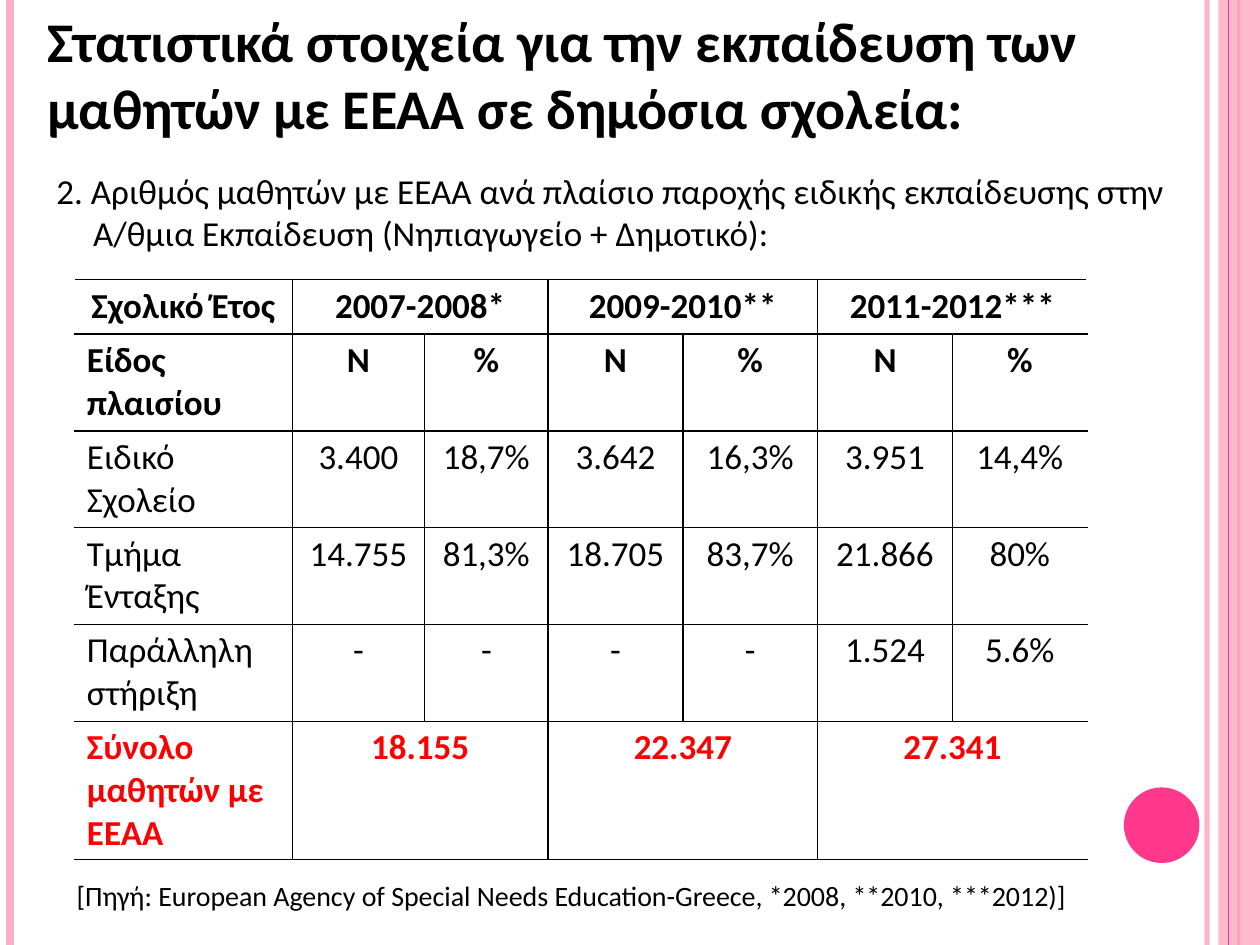
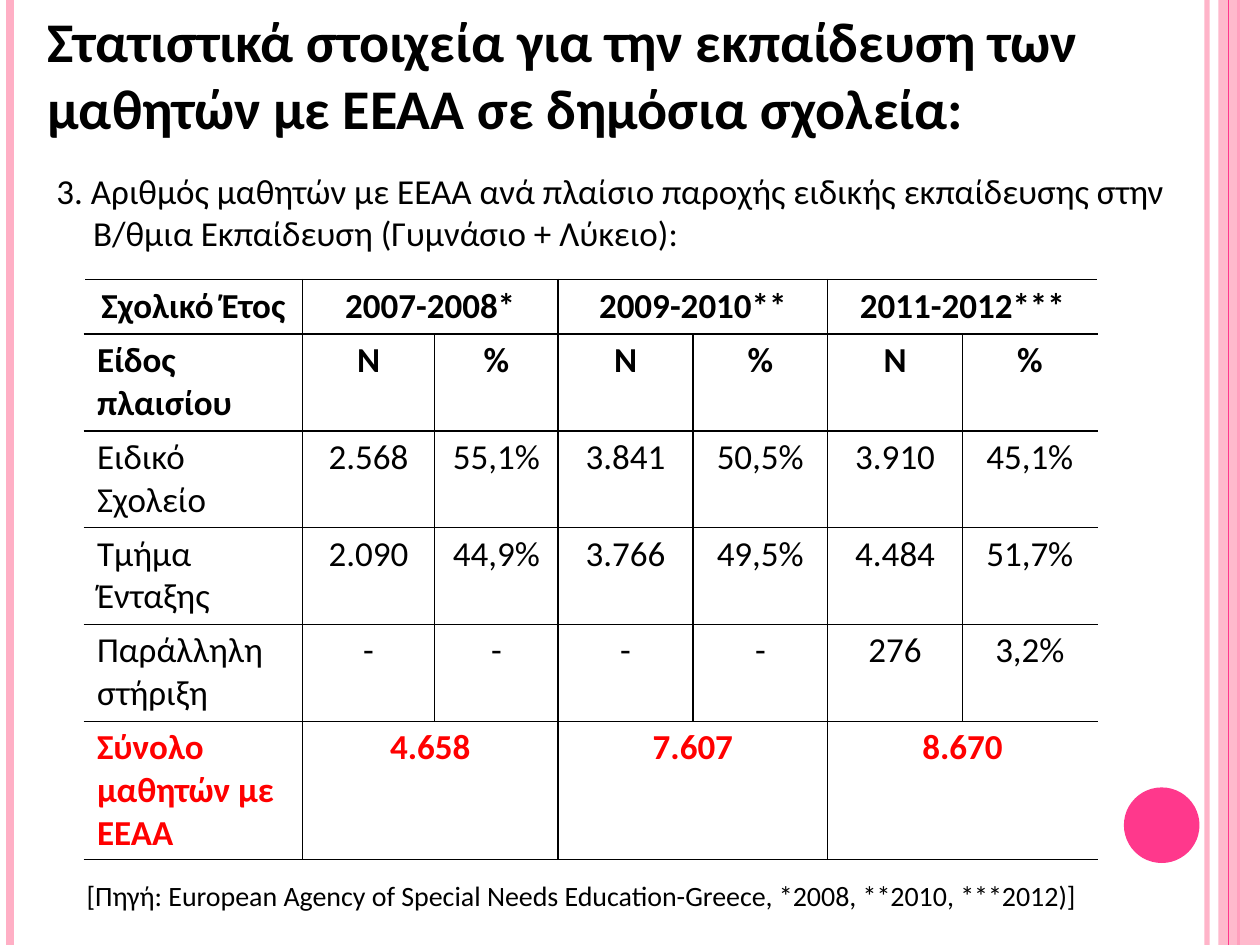
import dataclasses

import pptx
import pptx.dml.color
import pptx.enum.shapes
import pptx.enum.text
import pptx.oxml
import pptx.oxml.ns
import pptx.util


@dataclasses.dataclass(frozen=True)
class Theme:
    """Colours, font and type sizes shared by the slides."""
    font: str = "Calibri"
    ink: str = "000000"
    paper: str = "FFFFFF"
    total: str = "FF0000"
    pale: str = "FFAFC5"
    pink: str = "FF388C"
    title: int = 32
    body: int = 20
    source: int = 16


THEME = Theme()
WIDTH, HEIGHT = pptx.util.Inches(10), pptx.util.Inches(7.5)
ALIGN = pptx.enum.text.PP_ALIGN
SHAPE = pptx.enum.shapes.MSO_SHAPE
COLUMNS = (17.3, 10.5, 9.8, 10.7, 10.7, 10.7, 10.7)
ROWS = (5.75, 10.25, 10.25, 10.25, 10.25, 14.6)
TITLE = "Στατιστικά στοιχεία για την εκπαίδευση των μαθητών με ΕΕΑΑ σε δημόσια σχολεία:"
SOURCE = "[Πηγή: European Agency of Special Needs Education-Greece, *2008, **2010, ***2012)]"
QUESTION = "{}. Αριθμός μαθητών με ΕΕΑΑ ανά πλαίσιο παροχής ειδικής εκπαίδευσης στην {}:"
YEARS = ("Σχολικό Έτος", "2007-2008*", "2009-2010**", "2011-2012***")
UNITS = ("Είδος πλαισίου",) + ("Ν", "%") * 3
SETTINGS = ("Ειδικό Σχολείο", "Τμήμα Ένταξης", "Παράλληλη στήριξη")
TOTAL = "Σύνολο μαθητών με ΕΕΑΑ"
SLIDES = (
    dict(number=2, level="Α/θμια Εκπαίδευση (Νηπιαγωγείο + Δημοτικό)", left=5.9,
         counts=(("3.400", "18,7%", "3.642", "16,3%", "3.951", "14,4%"),
                 ("14.755", "81,3%", "18.705", "83,7%", "21.866", "80%"),
                 ("-", "-", "-", "-", "1.524", "5.6%")),
         totals=("18.155", "22.347", "27.341")),
    dict(number=3, level="Β/θμια Εκπαίδευση (Γυμνάσιο + Λύκειο)", left=6.7,
         counts=(("2.568", "55,1%", "3.841", "50,5%", "3.910", "45,1%"),
                 ("2.090", "44,9%", "3.766", "49,5%", "4.484", "51,7%"),
                 ("-", "-", "-", "-", "276", "3,2%")),
         totals=("4.658", "7.607", "8.670")),
)


def across(percent):
    """Return a percentage of the slide width."""
    return pptx.util.Emu(round(WIDTH * percent / 100))


def down(percent):
    """Return a percentage of the slide height."""
    return pptx.util.Emu(round(HEIGHT * percent / 100))


def rgb(color):
    """Return a colour object for a hex string."""
    return pptx.dml.color.RGBColor.from_string(color)


def set_alpha(sp, percent):
    """Make the solid colour of a shape or line partly transparent."""
    color = next(sp._element.spPr.iter(pptx.oxml.ns.qn("a:srgbClr")))
    alpha = color.makeelement(pptx.oxml.ns.qn("a:alpha"), {"val": str(percent * 1000)})
    color.append(alpha)


def add_stripe(s, left, color, weight, opacity=100):
    """Draw a full-height vertical line."""
    line = s.shapes.add_connector(pptx.enum.shapes.MSO_CONNECTOR.STRAIGHT,
                                  across(left), 0, across(left), HEIGHT)
    line.line.color.rgb = rgb(color)
    line.line.width = pptx.util.Pt(weight)
    spPr = line._element.spPr
    spPr.append(spPr.makeelement(pptx.oxml.ns.qn("a:effectLst"), {}))
    if opacity < 100:
        set_alpha(line, opacity)


def add_fill(s, kind, box, color, opacity=100):
    """Draw a plain filled shape without outline."""
    left, top, width, height = box
    sp = s.shapes.add_shape(kind, across(left), down(top), across(width), down(height))
    sp.shadow.inherit = False
    sp.fill.solid()
    sp.fill.fore_color.rgb = rgb(color)
    sp.line.fill.background()
    if opacity < 100:
        set_alpha(sp, opacity)


def add_frame(s):
    """Draw the pink side bands and the dot."""
    add_stripe(s, 95.8, THEME.pale, 3, 93)
    add_stripe(s, 0.8, THEME.pale, 4.5)
    add_stripe(s, 98.3, THEME.pink, 1.5)
    add_fill(s, SHAPE.RECTANGLE, (96.7, 0, 3.3, 100), THEME.pale, 87)
    add_stripe(s, 97.5, THEME.pink, 0.75)
    add_fill(s, SHAPE.OVAL, (89.2, 83.33, 6, 8), THEME.pink)


def write(tf, text, size, color=THEME.ink, bold=False, align=ALIGN.LEFT):
    """Put one styled paragraph into a text frame."""
    p = tf.paragraphs[0]
    p.text = text
    p.alignment = align
    p.font.name = THEME.font
    p.font.size = pptx.util.Pt(size)
    p.font.bold = bold
    p.font.color.rgb = rgb(color)
    return p


def add_text(s, left, top, height, text, size, bold=False, hanging=0):
    """Add a wrapping text box of the shared width."""
    sp = s.shapes.add_textbox(across(left), down(top), across(91.3), down(height))
    tf = sp.text_frame
    tf.word_wrap = True
    tf.auto_size = pptx.enum.text.MSO_AUTO_SIZE.SHAPE_TO_FIT_TEXT
    p = write(tf, text, size, bold=bold)
    if hanging:
        pPr = p._p.get_or_add_pPr()
        pPr.set("marL", str(across(hanging)))
        pPr.set("indent", str(-across(hanging)))


def set_borders(cell, first, last):
    """Rule a cell in ink, with paper-coloured outer sides."""
    tcPr = cell._tc.get_or_add_tcPr()
    colors = dict(L=THEME.paper if first else THEME.ink,
                  R=THEME.paper if last else THEME.ink, T=THEME.ink, B=THEME.ink)
    for side, color in colors.items():
        tcPr.append(pptx.oxml.parse_xml(
            f'<a:ln{side} {pptx.oxml.ns.nsdecls("a")} w="12700"><a:solidFill>'
            f'<a:srgbClr val="{color}"/></a:solidFill></a:ln{side}>'))


def add_table(s, left, rows):
    """Add the ruled table; short rows span two columns per value."""
    table = s.shapes.add_table(len(ROWS), len(COLUMNS), across(left), down(29.6),
                               across(sum(COLUMNS)), down(sum(ROWS))).table
    table.first_row = table.horz_banding = False
    for column, width in zip(table.columns, COLUMNS):
        column.width = across(width)
    for row, height in zip(table.rows, ROWS):
        row.height = down(height)
    end = len(COLUMNS) - 1
    for i, values in enumerate(rows):
        paired = len(values) < len(COLUMNS)
        for j in range(len(COLUMNS)):
            cell = table.cell(i, j)
            cell.margin_top = cell.margin_bottom = pptx.util.Inches(0.04)
            set_borders(cell, j == 0, j == end or (paired and j == end - 1))
            cell.fill.background()
        for j, value in enumerate(values):
            col = 2 * j - 1 if paired and j else j
            cell = table.cell(i, col)
            if paired and j:
                cell.merge(table.cell(i, col + 1))
            write(cell.text_frame, value, THEME.body,
                  THEME.total if values[0] == TOTAL else THEME.ink,
                  bold=values[0] not in SETTINGS,
                  align=ALIGN.CENTER if j or i == 0 else ALIGN.LEFT)


def add_statistics(prs, number, level, left, counts, totals):
    """Build one slide of pupil numbers by school setting."""
    s = prs.slides.add_slide(prs.slide_layouts[6])
    add_frame(s)
    add_text(s, 2.8, 0, 15.73, TITLE, THEME.title, bold=True)
    rows = [YEARS, UNITS]
    rows += [(name, *values) for name, values in zip(SETTINGS, counts)]
    add_table(s, left, rows + [(TOTAL, *totals)])
    add_text(s, 3.5, 17.33, 10.27, QUESTION.format(number, level), THEME.body, hanging=2.9)
    add_text(s, left - 0.8, 92.27, 4.93, SOURCE, THEME.source)


def main():
    """Build and save the presentation."""
    prs = pptx.Presentation()
    prs.slide_width, prs.slide_height = WIDTH, HEIGHT
    for content in SLIDES:
        add_statistics(prs, **content)
    prs.save("out.pptx")


if __name__ == "__main__":
    main()
